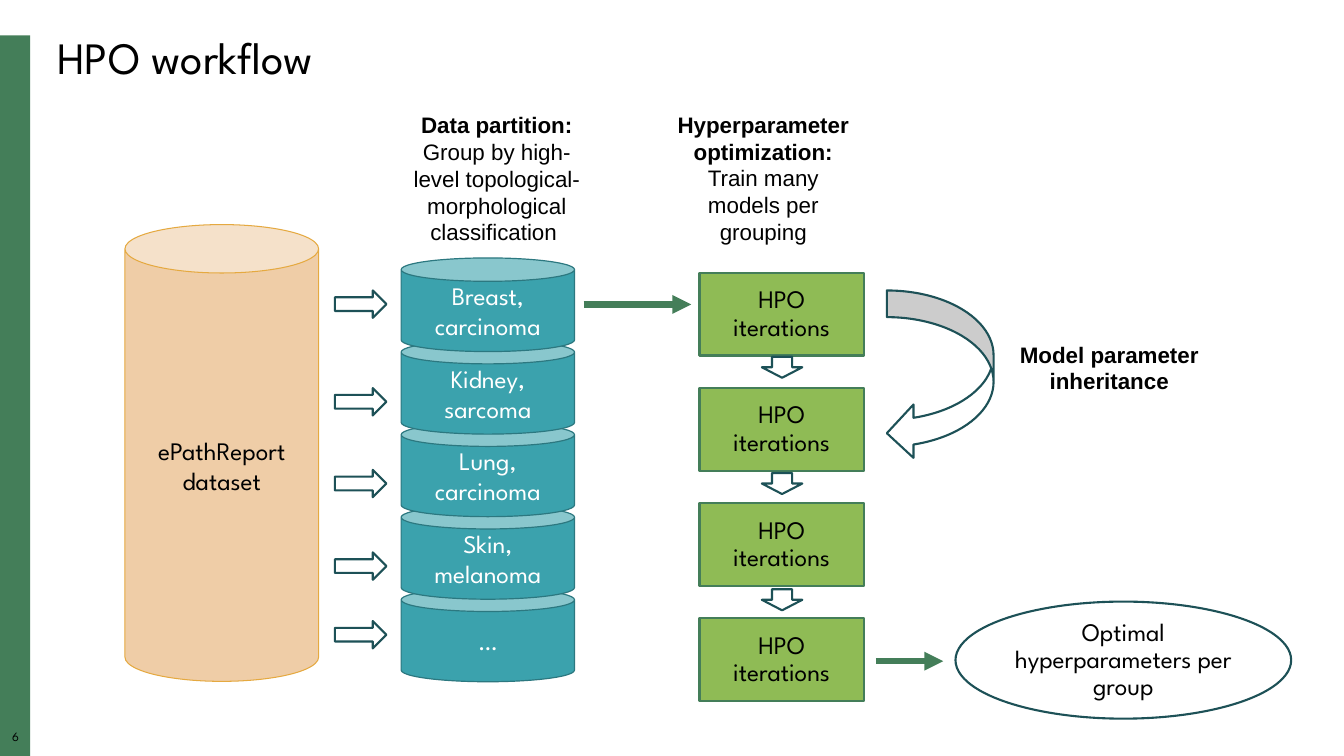
from dataclasses import dataclass
from typing import Optional

from lxml import etree
from pptx import Presentation
from pptx.dml.color import RGBColor
from pptx.enum import shapes, text
from pptx.oxml import ns
from pptx.util import Cm, Pt

BLACK = RGBColor(0x00, 0x00, 0x00)
WHITE = RGBColor(0xFF, 0xFF, 0xFF)
GREEN = RGBColor(0x44, 0x7E, 0x59)
LIME = RGBColor(0x8F, 0xBB, 0x55)
TEAL = RGBColor(0x3B, 0xA2, 0xAD)
TEAL_EDGE = RGBColor(0x2C, 0x78, 0x80)
DARK_TEAL = RGBColor(0x1D, 0x51, 0x57)
SAND = RGBColor(0xEF, 0xCD, 0xA7)
ORANGE = RGBColor(0xE5, 0xA9, 0x40)

HEADING_FONT = "League Spartan"
LABEL_FONT = "Arial"
GEOMETRY = shapes.MSO_SHAPE


@dataclass(frozen=True)
class Box:
    left: float
    top: float
    width: float
    height: float

    def lengths(self) -> tuple:
        return Cm(self.left), Cm(self.top), Cm(self.width), Cm(self.height)


@dataclass(frozen=True)
class Style:
    geometry: int
    fill: RGBColor
    line: Optional[RGBColor] = None
    line_width: float = 1.5
    font_color: RGBColor = BLACK
    spacing: float = 1.0
    inset: Optional[float] = None


DATASET = Style(GEOMETRY.CAN, SAND, ORANGE, 0.75)
PARTITION = Style(GEOMETRY.CAN, TEAL, TEAL_EDGE, 0.85, font_color=WHITE)
ITERATION = Style(GEOMETRY.RECTANGLE, LIME, GREEN, spacing=0.9, inset=0.51)
RESULT = Style(GEOMETRY.OVAL, WHITE, DARK_TEAL, spacing=0.9, inset=0.25)
SPLIT_ARROW = Style(GEOMETRY.RIGHT_ARROW, WHITE, DARK_TEAL)
NEXT_ARROW = Style(GEOMETRY.DOWN_ARROW, WHITE, DARK_TEAL)
INHERIT_ARROW = Style(GEOMETRY.CURVED_LEFT_ARROW, WHITE, DARK_TEAL)
SIDE_BAR = Style(GEOMETRY.RECTANGLE, GREEN)


@dataclass(frozen=True)
class Phrase:
    words: str
    bold: bool = False


def set_insets(frame, inset: float) -> None:
    frame.margin_left = frame.margin_right = Cm(inset)
    frame.margin_top = frame.margin_bottom = Cm(inset)


def format_font(font, name: str, size: float, color: RGBColor, bold: bool = False) -> None:
    font.name = name
    font.size = Pt(size)
    font.bold = bold
    font.color.rgb = color


def draw_shape(slide, box: Box, style: Style, words: str = "") -> None:
    shape = slide.shapes.add_shape(style.geometry, *box.lengths())
    shape.shadow.inherit = False
    shape.fill.solid()
    shape.fill.fore_color.rgb = style.fill
    if style.line is None:
        shape.line.fill.background()
    else:
        shape.line.color.rgb = style.line
        shape.line.width = Pt(style.line_width)
    if words:
        frame = shape.text_frame
        frame.text = words
        frame.word_wrap = True
        frame.vertical_anchor = text.MSO_ANCHOR.MIDDLE
        if style.inset is not None:
            set_insets(frame, style.inset)
        paragraph = frame.paragraphs[0]
        paragraph.alignment = text.PP_ALIGN.CENTER
        paragraph.line_spacing = style.spacing
        format_font(paragraph.runs[0].font, HEADING_FONT, 18, style.font_color)


def draw_label(slide, box: Box, paragraphs: list[list[Phrase]], font: str = LABEL_FONT,
               size: float = 16, inset: Optional[float] = None, spacing: float = 1.0) -> None:
    frame = slide.shapes.add_textbox(*box.lengths()).text_frame
    frame.word_wrap = True
    if inset is not None:
        set_insets(frame, inset)
    for index, phrases in enumerate(paragraphs):
        paragraph = frame.add_paragraph() if index else frame.paragraphs[0]
        paragraph.alignment = text.PP_ALIGN.CENTER
        paragraph.line_spacing = spacing
        for phrase in phrases:
            run = paragraph.add_run()
            run.text = phrase.words
            format_font(run.font, font, size, BLACK, phrase.bold)


def draw_flow_line(slide, start: float, end: float, height: float) -> None:
    flow = slide.shapes.add_connector(
        shapes.MSO_CONNECTOR.STRAIGHT, Cm(start), Cm(height), Cm(end), Cm(height))
    flow.line.color.rgb = GREEN
    flow.line.width = Pt(4.5)
    etree.SubElement(flow.line._get_or_add_ln(), ns.qn("a:tailEnd"), type="triangle")
    etree.SubElement(flow._element.spPr, ns.qn("a:effectLst"))


def draw_title(slide, words: str) -> None:
    title = slide.shapes.title
    title.left, title.top, title.width, title.height = Box(1.19, 0.76, 31.75, 1.5).lengths()
    frame = title.text_frame
    frame.text = words
    frame.auto_size = text.MSO_AUTO_SIZE.NONE
    frame.vertical_anchor = text.MSO_ANCHOR.MIDDLE
    paragraph = frame.paragraphs[0]
    paragraph.alignment = text.PP_ALIGN.LEFT
    paragraph.line_spacing = 0.9
    format_font(paragraph.runs[0].font, HEADING_FONT, 32, BLACK)


def main() -> None:
    deck = Presentation()
    deck.slide_width, deck.slide_height = Cm(33.87), Cm(19.05)
    slide = deck.slides.add_slide(deck.slide_layouts[5])

    # Frame of the slide
    draw_shape(slide, Box(0, 0.89, 0.76, 18.16), SIDE_BAR)
    draw_label(slide, Box(0, 18.4, 0.79, 0.43), [[Phrase("6")]],
               font=HEADING_FONT, size=9, inset=0, spacing=0.9)
    draw_title(slide, "HPO workflow")

    # Dataset and its partitions, stacked from the bottom up
    draw_shape(slide, Box(3.15, 5.66, 4.88, 11.51), DATASET, "ePathReport dataset")
    partitions = ["Breast, carcinoma", "Kidney, sarcoma", "Lung, carcinoma",
                  "Skin, melanoma", "…"]
    for row, partition in reversed(list(enumerate(partitions))):
        draw_shape(slide, Box(10.11, 6.5 + 2.08 * row, 4.37, 2.36), PARTITION, partition)
    for top in (7.32, 9.78, 11.84, 13.92, 15.65):
        draw_shape(slide, Box(8.44, top, 1.3, 0.69), SPLIT_ARROW)

    # Chain of optimization steps
    step_count = 4
    for step in range(step_count):
        draw_shape(slide, Box(17.63, 6.88 + 2.9 * step, 4.14, 2.08), ITERATION,
                   "HPO iterations")
    for step in range(step_count - 1):
        draw_shape(slide, Box(19.2, 8.99 + 2.93 * step, 1.02, 0.53), NEXT_ARROW)

    # Inheritance and result
    draw_shape(slide, Box(22.35, 7.32, 2.69, 4.27), INHERIT_ARROW)
    draw_shape(slide, Box(24.08, 15.16, 8.46, 2.95), RESULT,
               "Optimal hyperparameters per group")
    draw_flow_line(slide, 14.71, 17.42, 7.67)
    draw_flow_line(slide, 22.07, 23.77, 16.66)

    # Stage labels
    draw_label(slide, Box(10.13, 2.67, 4.78, 3.68), [[
        Phrase("Data partition: ", bold=True),
        Phrase("Group by high-level topological-morphological classification "),
    ]], inset=0.13)
    draw_label(slide, Box(16.71, 2.67, 5.05, 3.68), [
        [Phrase("Hyperparameter optimization:", bold=True)],
        [Phrase("Train many models per grouping")],
    ])
    draw_label(slide, Box(25.43, 8.46, 5.05, 1.63),
               [[Phrase("Model parameter inheritance", bold=True)]])

    deck.save("out.pptx")


if __name__ == "__main__":
    main()
